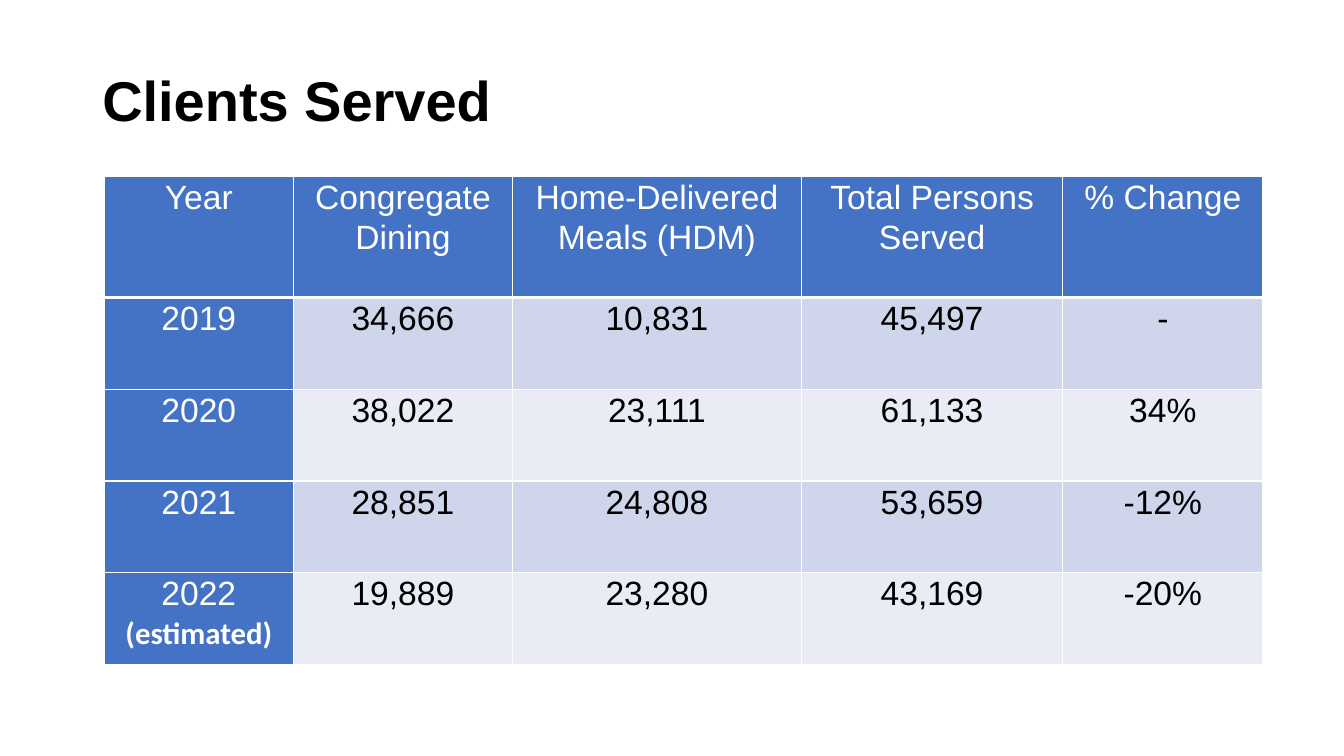
import pptx
import pptx.dml.color
import pptx.enum.text
import pptx.oxml
import pptx.oxml.ns
import pptx.util

Cm = pptx.util.Cm
Pt = pptx.util.Pt

COLORS = {
    "white": "FFFFFF",
    "black": "000000",
    "blue": "4472C4",
    "band_dark": "CFD5EA",
    "band_light": "E9EBF5",
}
HEADINGS = ["Year", "Congregate Dining", "Home-Delivered Meals (HDM)",
            "Total Persons Served", "% Change"]
YEARS = [
    ["2019", "34,666", "10,831", "45,497", "-"],
    ["2020", "38,022", "23,111", "61,133", "34%"],
    ["2021", "28,851", "24,808", "53,659", "-12%"],
    ["2022 ", "19,889", "23,280", "43,169", "-20%"],
]
COLUMN_WIDTHS = [4.78, 5.51, 7.29, 6.58, 5.05]
HEADING_HEIGHT = 3.05
YEAR_HEIGHT = 2.31


def rgb(name):
    """Return the named palette colour."""
    return pptx.dml.color.RGBColor.from_string(COLORS[name])


def style_run(run, size, color, font="Arial", bold=False):
    """Set the font of one run."""
    run.font.name = font
    run.font.size = Pt(size)
    run.font.bold = bold
    run.font.color.rgb = rgb(color)


def draw_borders(cell, bottom):
    """Give a cell thin white borders and a bottom one of the given points."""
    properties = cell._tc.get_or_add_tcPr()
    for side, points in (("L", 1), ("R", 1), ("T", 1), ("B", bottom)):
        properties.append(pptx.oxml.parse_xml(
            f'<a:ln{side} {pptx.oxml.ns.nsdecls("a")} w="{Pt(points)}">'
            f'<a:solidFill><a:srgbClr val="{COLORS["white"]}"/></a:solidFill>'
            f'</a:ln{side}>'))


def fill_cell(cell, text, fill, color, bottom=1):
    """Write and style one table cell, and return its paragraph."""
    draw_borders(cell, bottom)
    cell.fill.solid()
    cell.fill.fore_color.rgb = rgb(fill)
    cell.margin_left = cell.margin_right = Cm(0.48)
    cell.margin_top = cell.margin_bottom = 0
    paragraph = cell.text_frame.paragraphs[0]
    paragraph.text = text
    paragraph.alignment = pptx.enum.text.PP_ALIGN.CENTER
    paragraph.line_spacing = 1.07
    paragraph.space_after = Pt(8)
    style_run(paragraph.runs[0], 24, color)
    return paragraph


def add_title(slide, left, top, width, height):
    """Place the slide title in the given box."""
    frame = slide.shapes.add_textbox(
        Cm(left), Cm(top), Cm(width), Cm(height)).text_frame
    frame.word_wrap = True
    frame.vertical_anchor = pptx.enum.text.MSO_ANCHOR.MIDDLE
    frame.text = "Clients Served"
    heading = frame.paragraphs[0]
    heading.line_spacing = 0.9
    heading.space_after = Pt(6)
    style_run(heading.runs[0], 40, "black", bold=True)


def add_clients_table(slide, left, top, width, height):
    """Place the table of clients per year in the given box."""
    clients = slide.shapes.add_table(
        len(YEARS) + 1, len(HEADINGS),
        Cm(left), Cm(top), Cm(width), Cm(height)).table
    for column, column_width in zip(clients.columns, COLUMN_WIDTHS):
        column.width = Cm(column_width)
    for index, row in enumerate(clients.rows):
        row.height = Cm(YEAR_HEIGHT if index else HEADING_HEIGHT)

    for column, heading in enumerate(HEADINGS):
        fill_cell(clients.cell(0, column), heading, "blue", "white", bottom=3)
    for row, (year, *counts) in enumerate(YEARS, start=1):
        year_label = fill_cell(clients.cell(row, 0), year, "blue", "white")
        band = "band_dark" if row % 2 else "band_light"
        for column, count in enumerate(counts, start=1):
            fill_cell(clients.cell(row, column), count, band, "black")

    estimate = year_label.add_run()
    estimate.text = "(estimated)"
    style_run(estimate, 22, "white", font="Calibri", bold=True)


def main():
    """Build and save the slide."""
    deck = pptx.Presentation()
    deck.slide_width = Cm(33.87)
    deck.slide_height = Cm(19.05)
    slide = deck.slides.add_slide(deck.slide_layouts[6])
    add_title(slide, 2.33, 0.51, 29.21, 4.19)
    add_clients_table(slide, 2.62, 4.45, sum(COLUMN_WIDTHS),
                      HEADING_HEIGHT + len(YEARS) * YEAR_HEIGHT)
    deck.save("out.pptx")


if __name__ == "__main__":
    main()
